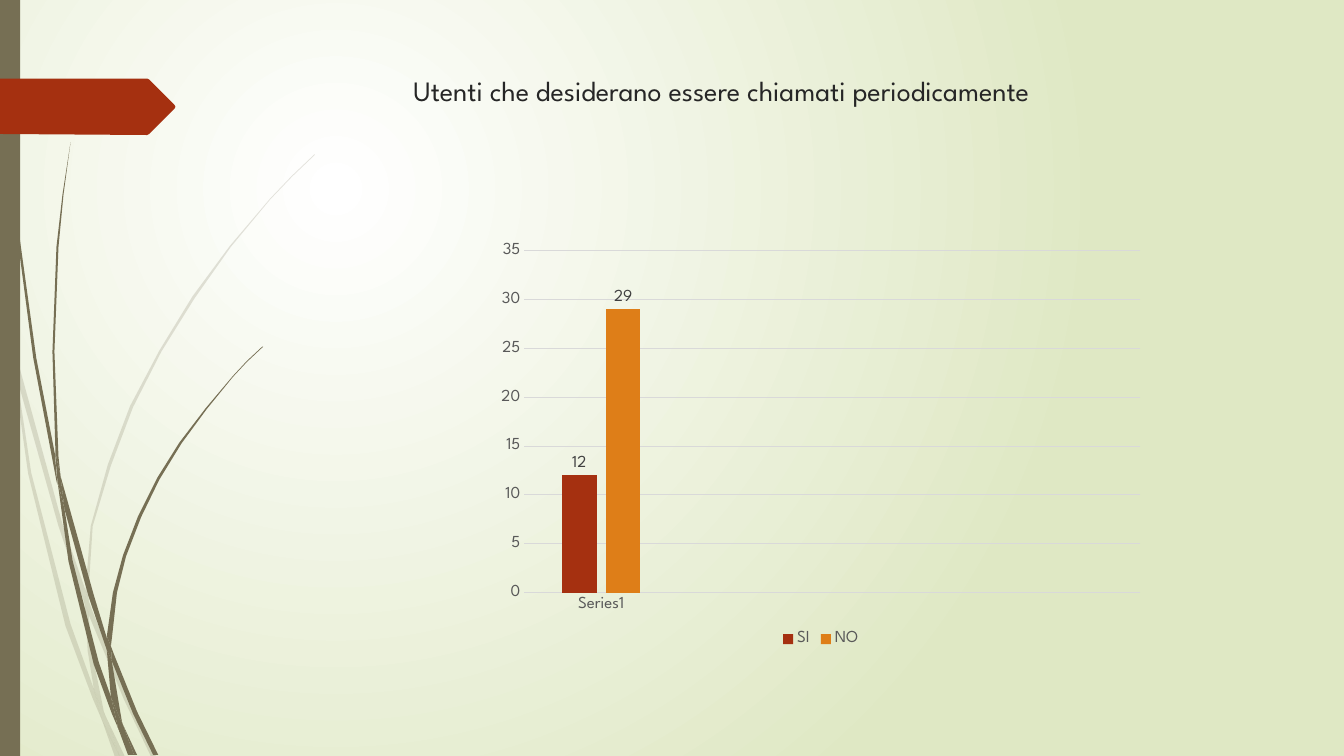
from collections import namedtuple

from pptx import Presentation
from pptx import util as u
from pptx.chart import data as chart_data
from pptx.dml import color as dml
from pptx.enum import chart as charts, shapes, text
from pptx.oxml import parse_xml
from pptx.oxml.ns import nsdecls, qn

PX = 9144  # EMU in one px, 100 px to the inch
FONT = "League Spartan"
OLIVE, RUST, ORANGE = "766F54", "A53010", "DE7E18"
GRID, AXIS_TEXT, LABEL_TEXT, TITLE_TEXT = "D9D9D9", "595959", "404040", "262626"

Box = namedtuple("Box", "left top width height")

# Outlines of the blades of grass, in px from the corner of their region.
PALE_BLADES = [
    [(11, 350), (9, 322), (0, 282), (0, 299), (10, 344)],
    [(58, 522), (84, 599), (85, 586), (62, 520), (14, 345), (17, 376)],
    [(92, 607), (88, 596), (88, 610), (123, 694), (150, 751), (155, 751), (127, 692)],
    [(119, 751), (124, 751), (105, 711)],
    [(93, 683), (70, 619), (31, 469), (17, 376), (11, 350), (28, 470), (65, 621),
     (92, 693), (101, 714), (99, 707)],
    [(84, 599), (87, 646), (93, 683), (96, 692), (105, 711), (103, 706), (91, 646),
     (88, 610), (88, 608)],
    [(88, 584), (92, 522), (110, 462), (132, 404), (160, 349), (193, 296), (229, 245),
     (268, 198), (290, 175), (312, 154), (312, 153), (289, 175), (268, 197),
     (228, 244), (191, 294), (158, 348), (129, 403), (107, 461), (90, 522),
     (85, 584), (85, 586), (88, 596)],
    [(101, 714), (114, 751), (119, 751)],
    [(88, 608), (88, 610), (88, 596), (85, 586), (84, 599)],
    [(96, 692), (93, 683), (99, 707), (101, 714), (119, 751), (105, 711)],
]
DARK_BLADES = [
    [(7, 110), (17, 233), (33, 355), (56, 477), (57, 481), (55, 457), (55, 453),
     (36, 355), (19, 232), (8, 109), (5, 48), (4, 0), (3, 0), (4, 48)],
    [(88, 592), (106, 645), (106, 633), (93, 590), (60, 472), (64, 505)],
    [(113, 649), (110, 641), (111, 656), (132, 708), (152, 749), (157, 749), (136, 706)],
    [(110, 691), (98, 657), (72, 556), (64, 505), (57, 477), (68, 557), (93, 659),
     (111, 708), (117, 722), (116, 717)],
    [(60, 472), (58, 453), (54, 349), (58, 245), (63, 193), (70, 141), (62, 193),
     (56, 245), (52, 349), (55, 449)],
    [(133, 749), (136, 749), (122, 719)],
    [(57, 477), (64, 505), (60, 472), (55, 449), (55, 453)],
    [(111, 633), (116, 588), (125, 552), (140, 513), (158, 476), (180, 440), (205, 406),
     (231, 374), (245, 359), (261, 344), (260, 344), (245, 358), (231, 373),
     (204, 405), (178, 439), (156, 474), (137, 512), (122, 551), (112, 588),
     (106, 631), (110, 641)],
    [(117, 722), (127, 749), (131, 749)],
    [(106, 645), (110, 691), (116, 706), (122, 719), (121, 716), (111, 656), (109, 651)],
    [(106, 645), (109, 651), (111, 656), (110, 641), (106, 631)],
    [(116, 706), (110, 691), (116, 717), (117, 722), (130, 749), (133, 749), (122, 719)],
]


def rgb(value):
    return dml.RGBColor.from_string(value)


def emu(box):
    return [round(length * PX) for length in box]


def style_font(font, size, colour):
    font.name = FONT
    font.size = u.Pt(size)
    font.color.rgb = rgb(colour)


def paint(shape, colour, opacity=100):
    shape.shadow.inherit = False
    shape.fill.solid()
    shape.fill.fore_color.rgb = rgb(colour)
    shape.line.fill.background()
    if opacity < 100:
        tint = shape.fill._xPr.find(".//" + qn("a:srgbClr"))
        tint.append(parse_xml(f'<a:alpha {nsdecls("a")} val="{opacity * 1000}"/>'))


def add_outline(page, box, points):
    placed = [((box.left + x) * PX, (box.top + y) * PX) for x, y in points]
    builder = page.shapes.build_freeform(*placed[0])
    builder.add_line_segments(placed[1:], close=True)
    return builder.convert_to_shape()


def add_decoration(page, box):
    for blades, opacity in ((PALE_BLADES, 20), (DARK_BLADES, 100)):
        for points in blades:
            paint(add_outline(page, box, points), OLIVE, opacity)
    band = page.shapes.add_shape(
        shapes.MSO_SHAPE.RECTANGLE, *emu((box.left, box.top, 20, box.height)))
    paint(band, OLIVE)
    arrow = [(0, 78), (146, 78), (148, 79), (173, 104), (174, 106), (173, 108),
             (148, 133), (146, 134), (0, 133)]
    paint(add_outline(page, box, arrow), RUST)


def set_background(page):
    page._element.cSld.insert(0, parse_xml(
        f'<p:bg {nsdecls("p", "a")}><p:bgPr><a:gradFill rotWithShape="1"><a:gsLst>'
        '<a:gs pos="0"><a:srgbClr val="FFFFFF"/></a:gs>'
        '<a:gs pos="100000"><a:srgbClr val="DFE8C4"/></a:gs></a:gsLst>'
        '<a:path path="circle">'
        '<a:fillToRect l="50000" t="50000" r="100000" b="100000"/></a:path>'
        '</a:gradFill><a:effectLst/></p:bgPr></p:bg>'))


def add_title(page, box):
    title = page.shapes.title
    title.left, title.top, title.width, title.height = emu(box)
    frame = title.text_frame
    frame.word_wrap = True
    frame.auto_size = text.MSO_AUTO_SIZE.NONE
    frame.vertical_anchor = text.MSO_ANCHOR.BOTTOM
    frame.margin_left = 126 * PX
    frame.margin_bottom = 4 * PX
    para = frame.paragraphs[0]
    para.alignment = text.PP_ALIGN.LEFT
    span = para.add_run()
    span.text = "Utenti che desiderano essere chiamati periodicamente"
    style_font(span.font, 20, TITLE_TEXT)


def place_plot(chart, box, inner):
    """Fix the inner plot area, given in px from the corner of the chart box."""
    area = chart._chartSpace.chart.plotArea
    for layout in area.findall(qn("c:layout")):
        area.remove(layout)
    fractions = {"x": inner.left / box.width, "y": inner.top / box.height,
                 "w": inner.width / box.width, "h": inner.height / box.height}
    sizes = "".join(f'<c:{name} val="{value:.4f}"/>' for name, value in fractions.items())
    area.insert(0, parse_xml(
        f'<c:layout {nsdecls("c")}><c:manualLayout><c:layoutTarget val="inner"/>'
        f'<c:xMode val="edge"/><c:yMode val="edge"/>{sizes}'
        '</c:manualLayout></c:layout>'))


def add_answer_chart(page, box):
    answers = chart_data.CategoryChartData()
    answers.categories = ["Series1", "", "", ""]
    answers.add_series("SI", [12, None, None, None])
    answers.add_series("NO", [29, None, None, None])
    chart = page.shapes.add_chart(
        charts.XL_CHART_TYPE.COLUMN_CLUSTERED, *emu(box), answers).chart
    chart.has_title = False
    style_font(chart.font, 12, AXIS_TEXT)
    place_plot(chart, box, Box(36, 16, 611, 339))

    chart.has_legend = True
    chart.legend.position = charts.XL_LEGEND_POSITION.BOTTOM
    chart.legend.include_in_layout = False
    style_font(chart.legend.font, 12, AXIS_TEXT)

    values = chart.value_axis
    values.minimum_scale, values.maximum_scale, values.major_unit = 0, 35, 5
    for axis in (chart.category_axis, values):
        axis.major_tick_mark = axis.minor_tick_mark = charts.XL_TICK_MARK.NONE
        style_font(axis.tick_labels.font, 12, AXIS_TEXT)
    values.format.line.fill.background()
    for edge in (chart.category_axis.format.line, values.major_gridlines.format.line):
        edge.color.rgb = rgb(GRID)
        edge.width = u.Pt(0.75)

    plot = chart.plots[0]
    plot.vary_by_categories = False
    plot.gap_width, plot.overlap = 219, -27
    for series, colour in zip(plot.series, (RUST, ORANGE)):
        series.format.fill.solid()
        series.format.fill.fore_color.rgb = rgb(colour)
        labels = series.data_labels
        labels.show_value = True
        labels.position = charts.XL_LABEL_POSITION.OUTSIDE_END
        style_font(labels.font, 12, LABEL_TEXT)


def main():
    deck = Presentation()
    deck.slide_width, deck.slide_height = 1333 * PX, 750 * PX
    page = deck.slides.add_slide(deck.slide_layouts[5])
    set_background(page)
    add_decoration(page, Box(0, 0, 1333, 750))
    add_title(page, Box(284, 68, 975, 42))
    add_answer_chart(page, Box(484, 233, 660, 413))
    deck.save("out.pptx")


if __name__ == "__main__":
    main()
